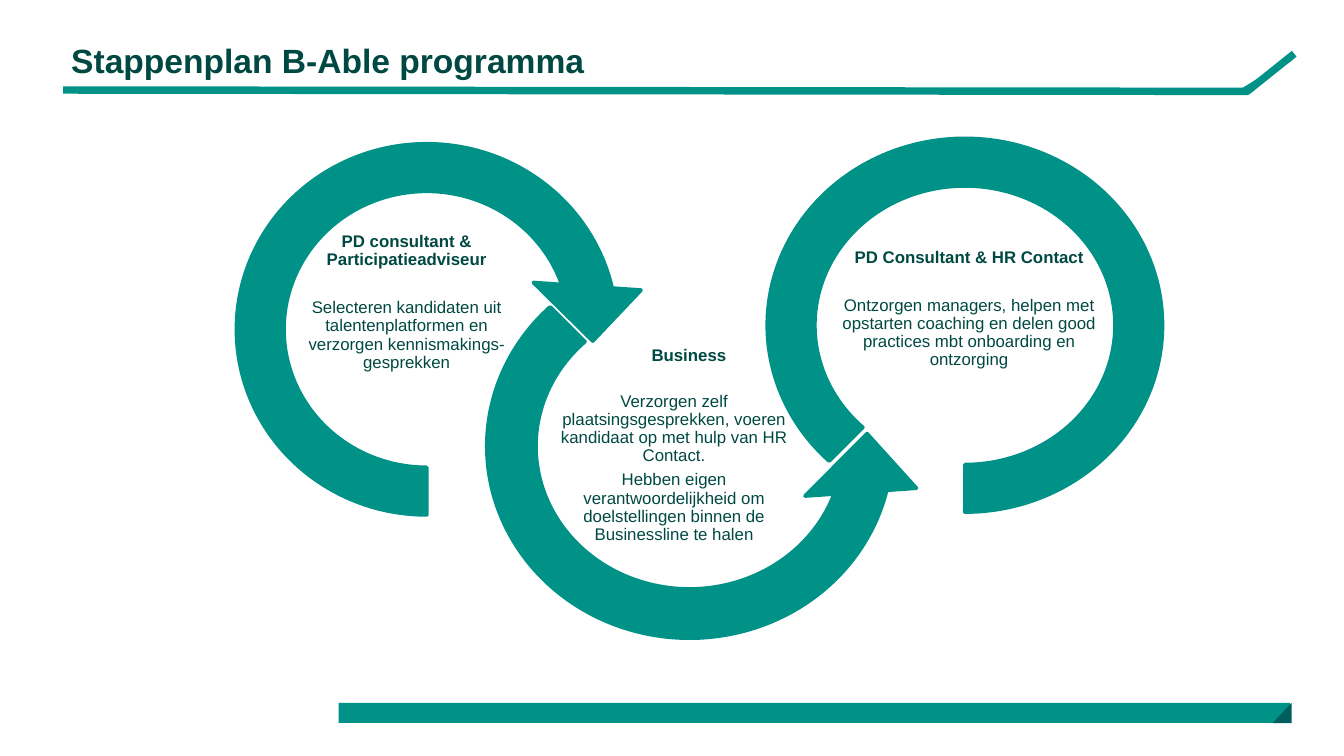
from dataclasses import dataclass

from lxml import etree
from pptx import Presentation
from pptx.dml.color import RGBColor
from pptx.enum.shapes import MSO_CONNECTOR, MSO_SHAPE as Shape
from pptx.enum.text import MSO_ANCHOR as Anchor, MSO_AUTO_SIZE as AutoSize, PP_ALIGN as Align
from pptx.oxml.ns import qn
from pptx.util import Inches, Pt


@dataclass(frozen=True)
class Theme:
    teal: RGBColor = RGBColor(0x00, 0x92, 0x86)
    shade: RGBColor = RGBColor(0x00, 0x5E, 0x5D)
    ink: RGBColor = RGBColor(0x00, 0x49, 0x43)
    font: str = "Arial"
    title_size: int = 18
    text_size: int = 9
    thin: float = 1.5
    outline: int = 2
    thick: int = 4
    inset: float = 0.01
    line_spacing: float = 0.9
    paragraph_gap: float = 3.15


class SlideBuilder:
    """Draws styled elements on the current slide."""

    def __init__(self, page, theme):
        self.page = page
        self.theme = theme

    def style_text(self, para, size, bold):
        for span in para.runs:
            font = span.font
            font.name, font.size, font.bold = self.theme.font, Pt(size), bold
            font.color.rgb = self.theme.ink

    def title(self, text, frame):
        box = self.page.shapes.title
        box.left, box.top, box.width, box.height = map(Inches, frame)
        text_frame = box.text_frame
        text_frame.text = text
        text_frame.auto_size = AutoSize.NONE
        text_frame.vertical_anchor = Anchor.MIDDLE
        text_frame.margin_left = text_frame.margin_right = 0
        text_frame.margin_top = text_frame.margin_bottom = 0
        para = text_frame.paragraphs[0]
        para.alignment = Align.LEFT
        para.line_spacing = Pt(20)
        self.style_text(para, self.theme.title_size, True)

    def shape(self, kind, frame, color):
        shape = self.page.shapes.add_shape(kind, *map(Inches, frame))
        shape.shadow.inherit = False
        shape.fill.solid()
        shape.fill.fore_color.rgb = color
        shape.line.fill.background()
        return shape

    def ring(self, kind, frame, adjustments):
        ring = self.shape(kind, frame, self.theme.teal)
        ring.rotation = 270
        for index, value in enumerate(adjustments):
            ring.adjustments[index] = value
        ring.line.color.rgb = self.theme.teal
        ring.line.width = Pt(self.theme.outline)

    def line(self, start, end):
        line = self.page.shapes.add_connector(
            MSO_CONNECTOR.STRAIGHT, *map(Inches, start + end))
        line.line.color.rgb = self.theme.teal
        line.line.width = Pt(self.theme.thin)
        etree.SubElement(line._element.spPr, qn("a:effectLst"))

    def polyline(self, points):
        start, *rest = [tuple(map(Inches, point)) for point in points]
        builder = self.page.shapes.build_freeform(*start)
        builder.add_line_segments(rest, close=False)
        outline = builder.convert_to_shape()
        outline.shadow.inherit = False
        outline.fill.background()
        outline.line.color.rgb = self.theme.teal
        outline.line.width = Pt(self.theme.thick)

    def step_text(self, frame, heading, body, heading_gap, bottom, indent):
        theme = self.theme
        box = self.page.shapes.add_textbox(*map(Inches, frame))
        text_frame = box.text_frame
        text_frame.word_wrap = True
        text_frame.vertical_anchor = Anchor.MIDDLE
        text_frame.margin_left = text_frame.margin_right = Inches(theme.inset)
        text_frame.margin_top = Inches(theme.inset)
        text_frame.margin_bottom = Inches(bottom)
        text_frame.text = "\n".join([heading, *body])
        for index, para in enumerate(text_frame.paragraphs):
            para.alignment = Align.CENTER
            para.line_spacing = theme.line_spacing
            if index:
                para.space_before = Pt(heading_gap if index == 1 else theme.paragraph_gap)
            self.style_text(para, theme.text_size, index == 0)
        if indent:
            text_frame.paragraphs[0]._p.get_or_add_pPr().set("marL", str(Pt(indent)))


STEPS = [
    (Shape.CIRCULAR_ARROW, (1.57, 0.81, 3.21, 3.28), (0.11, 11.42, 45, 108, 0.125),
     (2.25, 1.4, 1.55, 1.71), "PD consultant & Participatieadviseur",
     ["Selecteren kandidaten uit talentenplatformen en verzorgen kennismakings-gesprekken"],
     16, 0.02, 0),
    (Shape.LEFT_CIRCULAR_ARROW, (3.47, 1.58, 3.32, 3.48), (0.11, 11.42, 63, 189, 0.125),
     (4.08, 2.49, 1.87, 1.94), "Business",
     ["Verzorgen zelf plaatsingsgesprekken, voeren kandidaat op met hulp van HR Contact.",
      "Hebben eigen verantwoordelijkheid om doelstellingen binnen de Businessline te halen"],
     14.8, 0.3, 16),
    (Shape.BLOCK_ARC, (5.79, 0.95, 2.78, 2.94), (135, 108, 0.127),
     (6.24, 1.53, 1.94, 1.78), "PD Consultant & HR Contact",
     ["Ontzorgen managers, helpen met opstarten coaching en delen good practices "
      "mbt onboarding en ontzorging"],
     16, 0.25, 0),
]


def main():
    deck = Presentation()
    deck.slide_width, deck.slide_height = Inches(10), Inches(10 * 9 / 16)
    theme = Theme()
    slide = SlideBuilder(deck.slides.add_slide(deck.slide_layouts[5]), theme)

    slide.shape(Shape.RECTANGLE, (2.52, 5.23, 7.08, 0.15), theme.teal)
    corner = slide.shape(Shape.RIGHT_TRIANGLE, (9.47, 5.23, 0.14, 0.15), theme.shade)
    corner._element.spPr.xfrm.set("flipH", "1")
    slide.line((0.48, 0.67), (9.24, 0.67))
    slide.line((9.24, 0.67), (9.61, 0.44))
    slide.title("Stappenplan B-Able programma", (0.53, 0.18, 9.1, 0.56))

    for kind, ring_frame, adjustments, *text in STEPS:
        slide.ring(kind, ring_frame, adjustments)
        slide.step_text(*text)
    slide.polyline([(0.47, 0.67), (9.28, 0.68), (9.63, 0.4)])

    deck.save("out.pptx")


if __name__ == "__main__":
    main()
